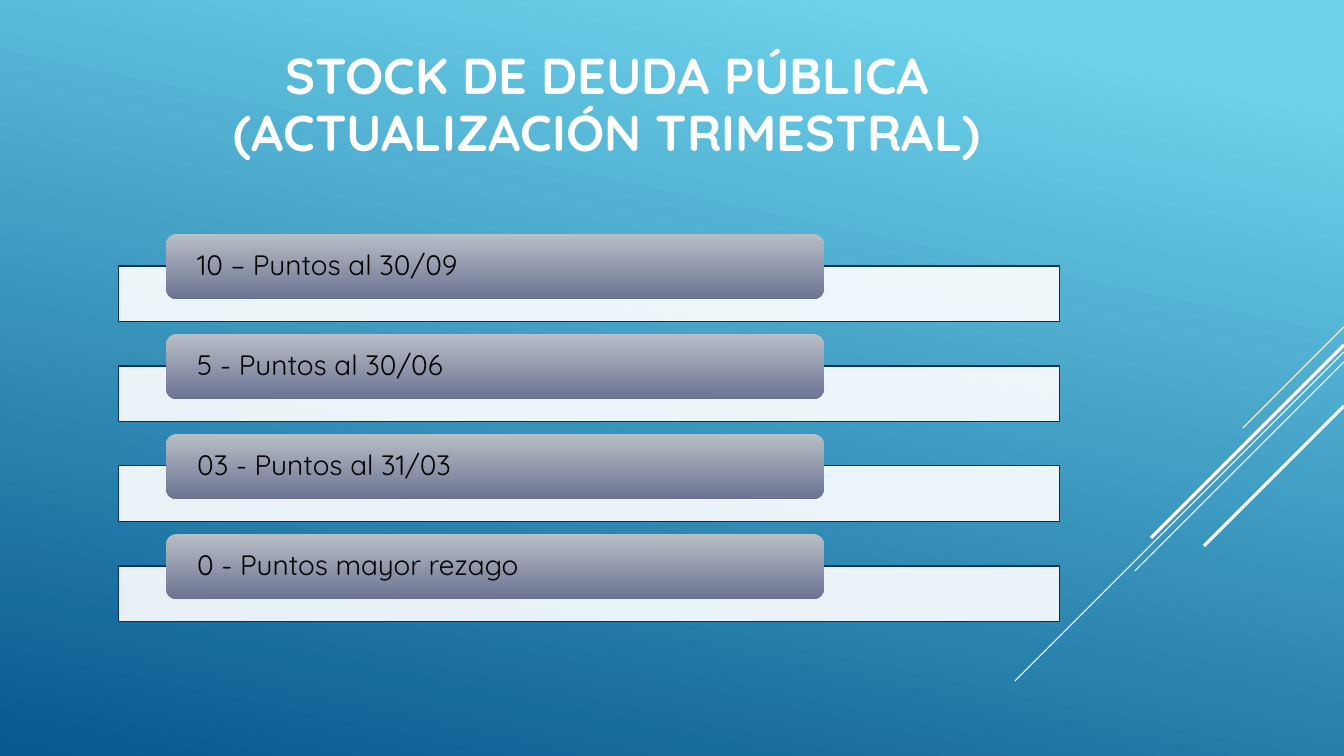
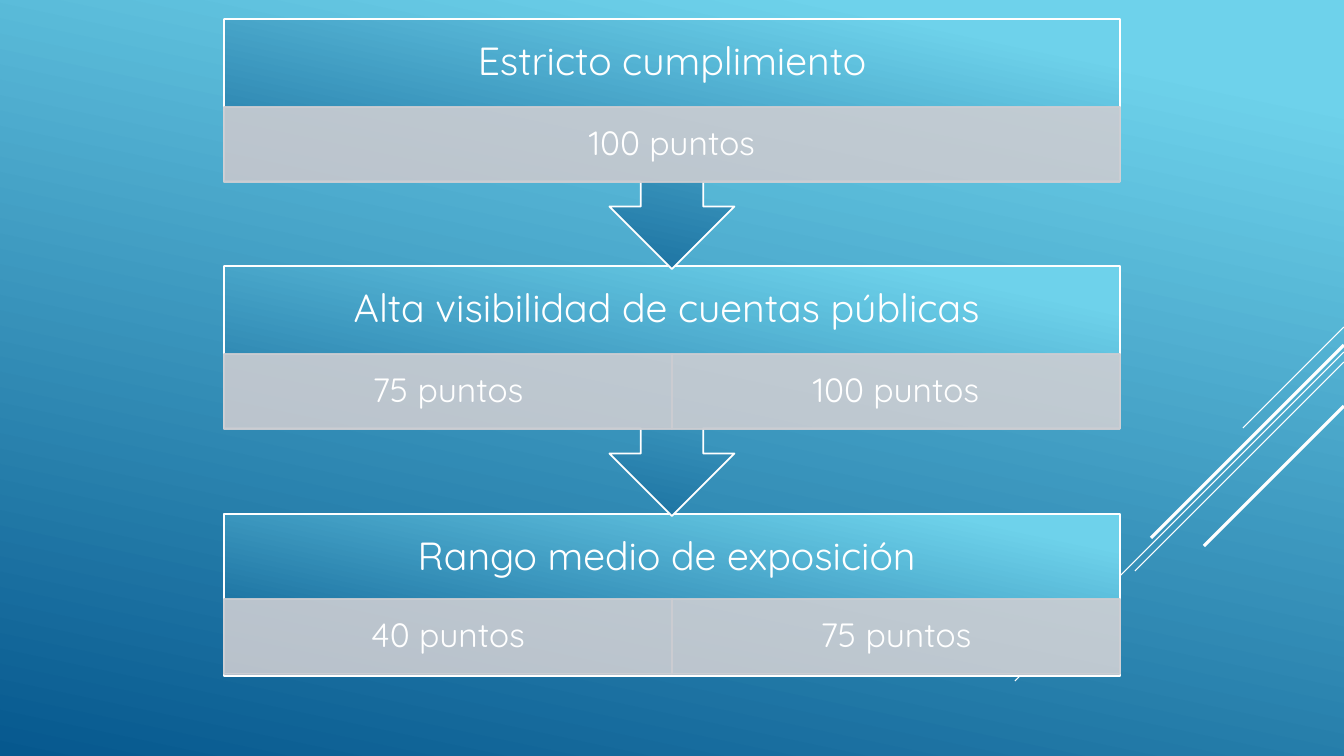
from lxml import etree
from pptx import Presentation
from pptx import util as u
from pptx.dml.color import RGBColor
from pptx.enum import shapes, text
from pptx.oxml.ns import qn

PX = 12192000 / 1344
FONT = "Quicksand"
WHITE = RGBColor(0xFF, 0xFF, 0xFF)
BLACK = RGBColor(0x00, 0x00, 0x00)
NAVY = RGBColor(0x05, 0x2F, 0x61)
SILVER = RGBColor(0xCC, 0xCD, 0xD2)
SKY_TO_SEA = ((0.1, RGBColor(0x6E, 0xD2, 0xEB)), (1, RGBColor(0x06, 0x58, 0x8E)))
GREY_TO_SLATE = ((0, RGBColor(0xB8, 0xBE, 0xC6)), (1, RGBColor(0x6C, 0x74, 0x93)))


def px(*lengths):
    return [u.Emu(round(length * PX)) for length in lengths]


def write(frame, words, size, colour=WHITE, align=text.PP_ALIGN.CENTER,
          margins=(0, 0, 0, 0), spacing=0.9):
    """Put one styled run in the frame; margins are left, top, right, bottom."""
    frame.word_wrap = True
    frame.vertical_anchor = text.MSO_ANCHOR.MIDDLE
    (frame.margin_left, frame.margin_top,
     frame.margin_right, frame.margin_bottom) = px(*margins)
    paragraph = frame.paragraphs[0]
    paragraph.alignment = align
    paragraph.line_spacing = spacing
    run = paragraph.add_run()
    run.text = words
    run.font.name = FONT
    run.font.size = u.Pt(size)
    run.font.color.rgb = colour
    return run


prs = Presentation()
prs.slide_width, prs.slide_height = px(1344, 756)
blank = prs.slide_layouts[6]
debt, stages = [prs.slides.add_slide(blank) for _ in range(2)]
gradients = [(prs.slide_master.background.fill, SKY_TO_SEA, 102)]
translucent = []

# Diagonal lines leaving the right edge: start height, run, weight
for slide in (debt, stages):
    for top, run_length, weight in ((327, 101, 0.75), (352, 329, 0.75), (362, 209, 0.75),
                                    (345, 193, 2.25), (406, 140, 2.25)):
        ray = slide.shapes.add_connector(
            shapes.MSO_CONNECTOR.STRAIGHT,
            *px(1344, top, 1344 - run_length, top + run_length))
        ray.line.color.rgb = WHITE
        ray.line.width = u.Pt(weight)
        etree.SubElement(ray._element.spPr, qn("a:effectLst"))

# Public debt: points by update date
title = debt.shapes.add_textbox(*px(137, 23, 940, 166))
write(title.text_frame, "STOCK DE DEUDA PÚBLICA (ACTUALIZACIÓN TRIMESTRAL)", 36,
      margins=(10, 5, 10, 5), spacing=0.95).font.bold = True

deadlines = ("10 – Puntos al 30/09", "5 - Puntos al 30/06",
             "03 - Puntos al 31/03", "0 - Puntos mayor rezago")
for row, deadline in enumerate(deadlines):
    top = 234 + 100 * row
    panel = debt.shapes.add_shape(shapes.MSO_SHAPE.RECTANGLE, *px(119, top + 32, 941, 56))
    panel.shadow.inherit = False
    panel.fill.solid()
    panel.fill.fore_color.rgb = WHITE
    translucent += panel._element.spPr.iter(qn("a:srgbClr"))
    panel.line.color.rgb = NAVY
    panel.line.width = u.Pt(0.75)

    bar = debt.shapes.add_shape(shapes.MSO_SHAPE.ROUNDED_RECTANGLE, *px(166, top, 658, 65))
    bar.shadow.inherit = False
    bar.line.fill.background()
    gradients.append((bar.fill, GREY_TO_SLATE, 90))
    write(bar.text_frame, deadline, 20, BLACK, text.PP_ALIGN.LEFT, (28, 0, 28, 0))

# Compliance stages, lowest first so that each arrow lies over the next block
LEFT, WIDTH, SCORE_HEIGHT = 224, 896, 75
CALLOUT, BLOCK = shapes.MSO_SHAPE.DOWN_ARROW_CALLOUT, shapes.MSO_SHAPE.RECTANGLE
levels = (
    (BLOCK, 514, 162, 599, "Rango medio de exposición ", ("40 puntos", "75 puntos")),
    (CALLOUT, 266, 250, 354, "Alta visibilidad de cuentas públicas ",
     ("75 puntos", "100 puntos")),
    (CALLOUT, 19, 250, 107, "Estricto cumplimiento", ("100 puntos",)),
)
for outline, top, height, score_top, heading, scores in levels:
    stage = stages.shapes.add_shape(outline, *px(LEFT, top, WIDTH, height))
    stage.shadow.inherit = False
    stage.line.color.rgb = WHITE
    stage.line.width = u.Pt(1.25)
    gradients.append((stage.fill, SKY_TO_SEA, 102))
    write(stage.text_frame, heading, 28, margins=(22, 0, 22, SCORE_HEIGHT))

    score_width = WIDTH // len(scores)
    for column, points in enumerate(scores):
        score = stages.shapes.add_shape(
            BLOCK, *px(LEFT + column * score_width, score_top, score_width, SCORE_HEIGHT))
        score.shadow.inherit = False
        score.fill.solid()
        score.fill.fore_color.rgb = SILVER
        score.line.color.rgb = SILVER
        score.line.width = u.Pt(1.25)
        translucent += score._element.spPr.iter(qn("a:srgbClr"))
        write(score.text_frame, points, 24, margins=(19, 3, 19, 3))

for fill, stops, clockwise in gradients:
    fill.gradient()
    fill.gradient_angle = 360 - clockwise
    for stop, (position, colour) in zip(fill.gradient_stops, stops):
        stop.position = position
        stop.color.rgb = colour

for colour in translucent:
    etree.SubElement(colour, qn("a:alpha"), val="90000")

prs.save("out.pptx")
